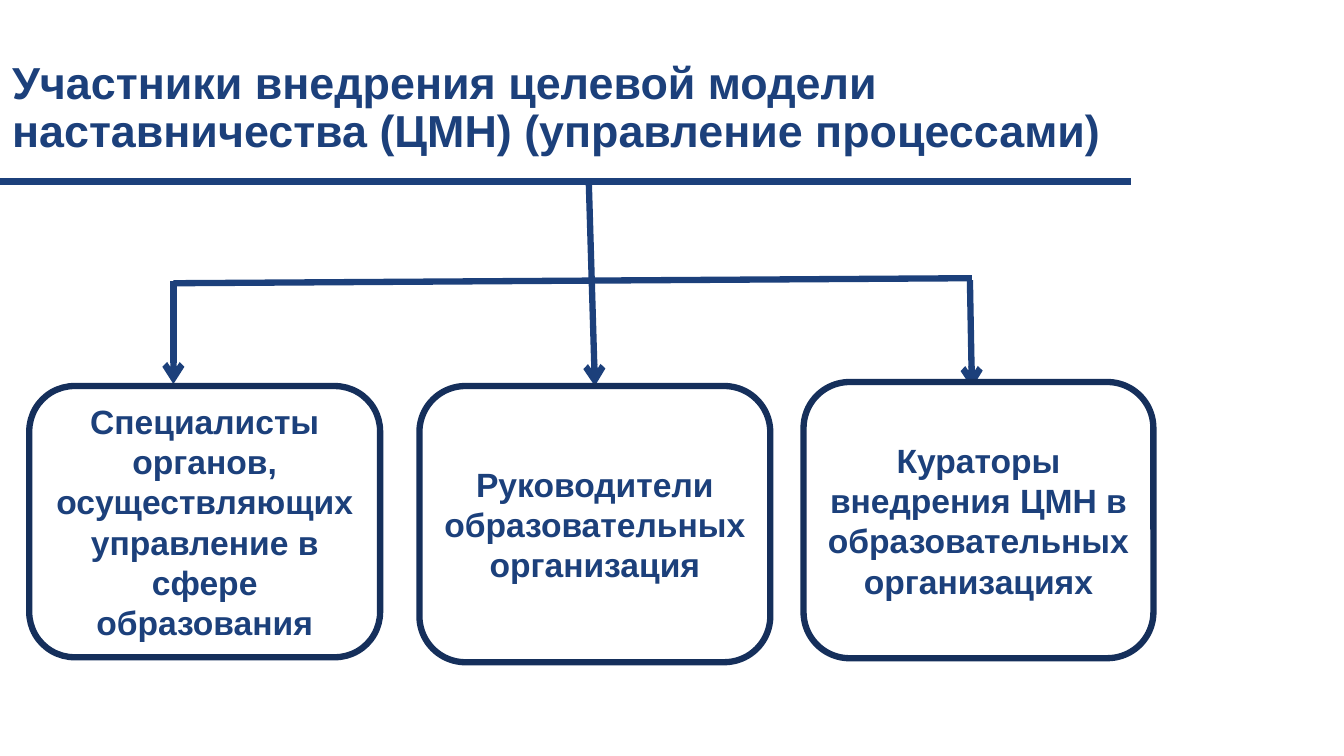
from pptx import Presentation
from pptx.dml.color import RGBColor as RGB
from pptx.enum.shapes import MSO_CONNECTOR as LINK, MSO_SHAPE as SHAPE
from pptx.enum.text import MSO_ANCHOR as ANCHOR, PP_ALIGN as ALIGN
from pptx.oxml.ns import qn
from pptx.util import Inches, Pt
from lxml.etree import SubElement

COLORS = {"main": "1C407B", "edge": "152F5B", "fill": "FFFFFF"}


def draw_line(x1, y1, x2, y2, arrow=False):
    line = slide.shapes.add_connector(
        LINK.STRAIGHT, Inches(x1), Inches(y1), Inches(x2), Inches(y2))
    line.line.color.rgb = RGB.from_string(COLORS["main"])
    line.line.width = Pt(4.5)
    if arrow:
        SubElement(line.line._get_or_add_ln(), qn("a:tailEnd"), type="arrow")
    SubElement(line._element.spPr, qn("a:effectLst"))
    return line


def set_text(frame, text, size):
    frame.word_wrap = True
    frame.text = text
    font = frame.paragraphs[0].runs[0].font
    font.name = "Arial"
    font.size = Pt(size)
    font.bold = True
    font.color.rgb = RGB.from_string(COLORS["main"])


deck = Presentation()
deck.slide_width = Inches(13.33)
deck.slide_height = Inches(7.5)
slide = deck.slides.add_slide(deck.slide_layouts[6])

draw_line(0, 1.8, 11.22, 1.8)

title = slide.shapes.add_textbox(
    Inches(0.12), Inches(0.6), Inches(11.45), Inches(0.87))
frame = title.text_frame
frame.margin_left = frame.margin_right = 0
frame.margin_top = frame.margin_bottom = 0
set_text(frame, "Участники внедрения целевой модели "
         "наставничества (ЦМН) (управление процессами)", 32)
frame.paragraphs[0].line_spacing = 0.9

draw_line(1.72, 2.81, 9.64, 2.76)
trunk = draw_line(5.84, 1.81, 5.86, 3.81, arrow=True)
draw_line(1.72, 2.79, 1.72, 3.81, arrow=True)
draw_line(9.62, 2.78, 9.64, 3.85, arrow=True)

roles = [
    (0.29, 3.83, 3.48, 2.69,
     "Специалисты органов, осуществляющих управление в сфере образования"),
    (4.16, 3.83, 3.48, 2.74, "Руководители образовательных организация"),
    (7.97, 3.79, 3.47, 2.74,
     "Кураторы внедрения ЦМН в образовательных организациях"),
]
boxes = []
for left, top, width, height, text in roles:
    box = slide.shapes.add_shape(
        SHAPE.ROUNDED_RECTANGLE,
        Inches(left), Inches(top), Inches(width), Inches(height))
    box.shadow.inherit = False
    box.fill.solid()
    box.fill.fore_color.rgb = RGB.from_string(COLORS["fill"])
    box.line.color.rgb = RGB.from_string(COLORS["edge"])
    box.line.width = Pt(4.5)
    set_text(box.text_frame, text, 24)
    box.text_frame.vertical_anchor = ANCHOR.MIDDLE
    box.text_frame.paragraphs[0].alignment = ALIGN.CENTER
    boxes.append(box)

trunk.end_connect(boxes[1], 0)

deck.save("out.pptx")
